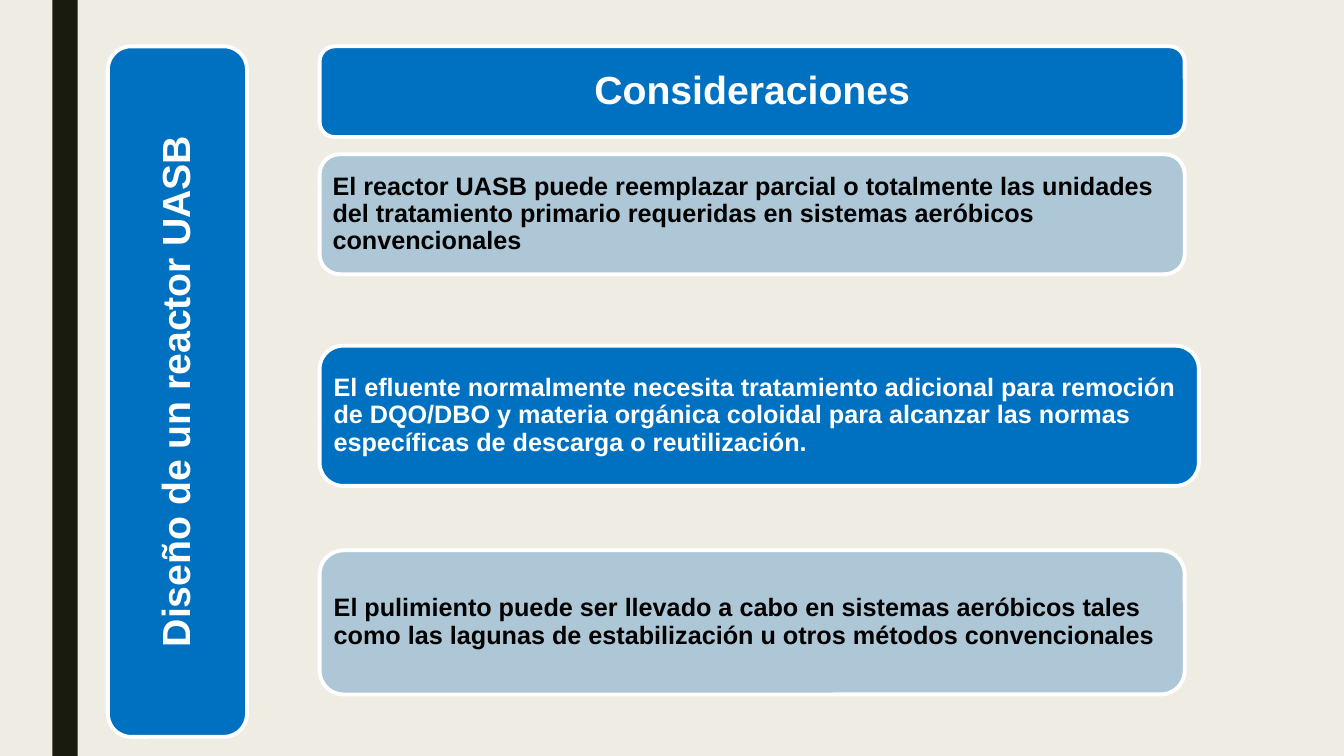
from pptx import Presentation
from pptx.dml.color import RGBColor
from pptx.enum.shapes import MSO_SHAPE as SHAPE
from pptx.enum.text import MSO_ANCHOR as ANCHOR, MSO_AUTO_SIZE as AUTO, PP_ALIGN as ALIGN
from pptx.util import Inches, Pt

BLUE, PALE, DARK = "0070C0", "ADC7D6", "191B0E"
WHITE, BLACK, CREAM = "FFFFFF", "000000", "EFEDE3"


def rgb(value):
    return RGBColor.from_string(value)


def write(tf, text, size=18, color=BLACK, align=ALIGN.LEFT, inset=0.07, vert="horz"):
    """Put one bold, vertically centred paragraph in a text frame."""
    tf.word_wrap = True
    tf.auto_size = AUTO.NONE
    tf.vertical_anchor = ANCHOR.MIDDLE
    tf.margin_left = tf.margin_right = Inches(inset)
    tf.margin_top = tf.margin_bottom = Inches(inset)
    tf._txBody.bodyPr.set("vert", vert)
    p = tf.paragraphs[0]
    p.alignment, p.line_spacing = align, 0.9
    r = p.add_run()
    r.text = text
    r.font.name, r.font.size, r.font.bold = "Arial", Pt(size), True
    r.font.color.rgb = rgb(color)


class Deck:
    """Holds the current slide and the look of its elements."""
    CORNER = 0.05  # share of the short side between panel edge and text area

    def __init__(self):
        self.prs = Presentation()
        self.prs.slide_width, self.prs.slide_height = Inches(13.33), Inches(7.5)
        self.s = self.prs.slides.add_slide(self.prs.slide_layouts[5])
        fill = self.s.background.fill
        fill.solid()
        fill.fore_color.rgb = rgb(CREAM)

    def shape(self, kind, x, y, w, h, fill):
        sp = self.s.shapes.add_shape(kind, Inches(x), Inches(y), Inches(w), Inches(h))
        sp.shadow.inherit = False
        sp.fill.solid()
        sp.fill.fore_color.rgb = rgb(fill)
        sp.line.fill.background()
        return sp

    def panel(self, x, y, w, h, fill):
        sp = self.shape(SHAPE.ROUNDED_RECTANGLE, x, y, w, h, fill)
        sp.line.color.rgb = rgb(WHITE)
        sp.line.width = Pt(2.75)
        return sp

    def text_panel(self, x, y, w, h, fill, text, **fmt):
        write(self.panel(x, y, w, h, fill).text_frame, text, **fmt)

    def title_panel(self, x, y, w, h, fill, text, **fmt):
        panel = self.panel(x, y, w, h, fill)
        title = self.s.shapes.title
        # Bring the title in front of its panel
        panel._element.addnext(title._element)
        gap = self.CORNER * min(w, h)
        title.left, title.top = Inches(x + gap), Inches(y + gap)
        title.width, title.height = Inches(w - 2 * gap), Inches(h - 2 * gap)
        write(title.text_frame, text, **fmt)


def main():
    deck = Deck()
    heading = dict(size=28, color=WHITE, align=ALIGN.CENTER, inset=0.12)
    left, top, width = 3.17, 0.46, 8.58

    # Side band and vertical topic
    deck.shape(SHAPE.RECTANGLE, 0.52, 0, 0.25, 7.5, DARK)
    deck.text_panel(1.07, top, 1.38, 6.85, BLUE, "Diseño de un reactor UASB",
                    vert="vert270", **heading)

    # Slide title
    deck.title_panel(left, top, width, 0.9, BLUE, "Consideraciones", **heading)

    # Considerations: top, width, height, fill, text colour, text
    considerations = [
        (1.53, width, 1.19, PALE, BLACK,
         "El reactor UASB puede reemplazar parcial o totalmente las unidades del "
         "tratamiento primario requeridas en sistemas aeróbicos convencionales"),
        (3.43, 8.72, 1.39, BLUE, WHITE,
         "El efluente normalmente necesita tratamiento adicional para remoción de "
         "DQO/DBO y materia orgánica coloidal para alcanzar las normas específicas "
         "de descarga o reutilización."),
        (5.46, width, 1.43, PALE, BLACK,
         "El pulimiento puede ser llevado a cabo en sistemas aeróbicos tales como "
         "las lagunas de estabilización u otros métodos convencionales"),
    ]
    for y, w, h, fill, color, text in considerations:
        deck.text_panel(left, y, w, h, fill, text, color=color)

    deck.prs.save("out.pptx")


if __name__ == "__main__":
    main()
